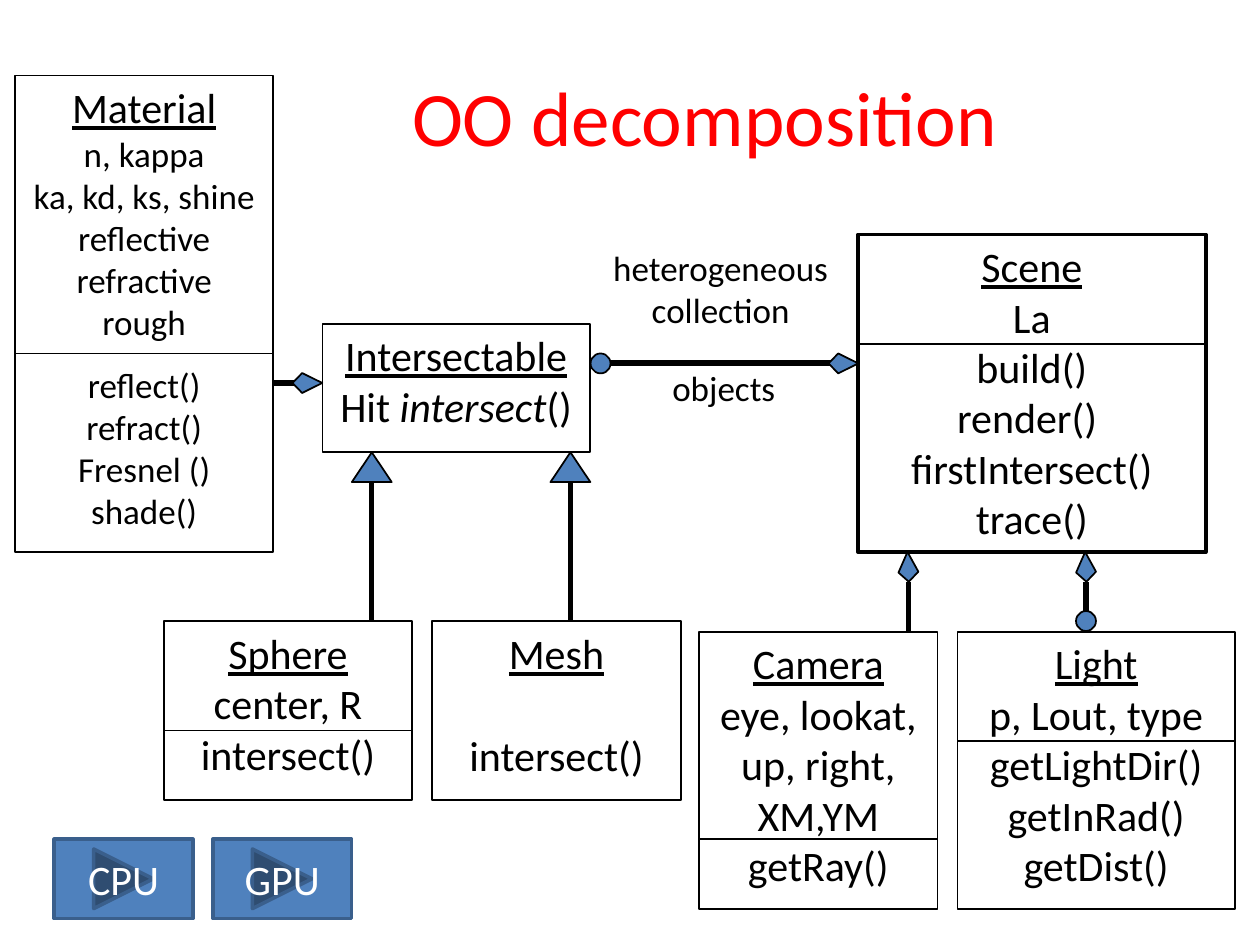
from dataclasses import dataclass
from lxml import etree
from pptx import Presentation
from pptx import util as u
from pptx.dml.color import RGBColor
from pptx.enum import shapes, text
from pptx.oxml.ns import qn

Pt = u.Pt
Kind = shapes.MSO_SHAPE


@dataclass(frozen=True)
class Theme:
    font: str = "Calibri"
    ink: str = "000000"
    red: str = "FF0000"
    blue: str = "4F81BD"
    edge: str = "3A5F8C"
    white: str = "FFFFFF"
    head: int = 44
    body: int = 24
    small: int = 20


def write(frame, words, size, color, under=False, slant=False, gap=0, join=False):
    """Add a centred paragraph, or a run to the last one when join is set."""
    para = frame.paragraphs[-1]
    if para.runs and not join:
        para = frame.add_paragraph()
    if not join:
        para.alignment = text.PP_ALIGN.CENTER
        para.space_before = Pt(gap)
    run = para.add_run()
    run.text = words
    font = run.font
    font.name, font.size = Theme.font, Pt(size)
    font.color.rgb = RGBColor.from_string(color)
    font.underline, font.italic = under, slant


class Board:
    def __init__(self, slide, theme):
        self.slide, self.theme = slide, theme
        self.items = slide.shapes

    def paint(self, item, fill=None, edge=None, width=1):
        item.shadow.inherit = False
        if fill:
            item.fill.solid()
            item.fill.fore_color.rgb = RGBColor.from_string(fill)
        else:
            item.fill.background()
        item.line.color.rgb = RGBColor.from_string(edge or self.theme.ink)
        item.line.width = Pt(width)
        return item

    def label(self, words, x, y, w, h, size, color, wrap=False):
        frame = self.items.add_textbox(Pt(x), Pt(y), Pt(w), Pt(h)).text_frame
        frame.word_wrap = wrap
        frame.vertical_anchor = text.MSO_ANCHOR.MIDDLE if wrap else text.MSO_ANCHOR.TOP
        for row in words.split("\n"):
            write(frame, row, size, color)

    def rule(self, x1, y1, x2, y2, width=3):
        line = self.items.add_connector(
            shapes.MSO_CONNECTOR.STRAIGHT, Pt(x1), Pt(y1), Pt(x2), Pt(y2))
        line.line.color.rgb = RGBColor.from_string(self.theme.ink)
        line.line.width = Pt(width)
        etree.SubElement(line._element.spPr, qn("a:effectLst"))

    def box(self, name, rows, x, y, w, h, size=None, cut=None, width=1, gaps=None):
        """Class box: underlined name, member rows, divider at height cut."""
        t = self.theme
        item = self.items.add_shape(Kind.RECTANGLE, Pt(x), Pt(y), Pt(w), Pt(h))
        frame = self.paint(item, width=width).text_frame
        frame.word_wrap = True
        frame.vertical_anchor = text.MSO_ANCHOR.TOP
        write(frame, name, t.body, t.ink, under=True)
        for row in rows:
            write(frame, row, size or t.body, t.ink, gap=(gaps or {}).get(row, 0))
        if cut:
            self.rule(x, cut, x + w, cut, 0.75)
        return frame

    def form(self, points, turn=0):
        (x, y), *rest = [(Pt(a), Pt(b)) for a, b in points]
        pen = self.items.build_freeform(x, y)
        pen.add_line_segments(rest, close=True)
        item = self.paint(pen.convert_to_shape(), self.theme.blue)
        item.rotation = turn

    def kite(self, x, y, turn=0):
        mid = y + 5.7
        self.form([(x + 17, mid), (x + 5.5, y), (x, mid), (x + 5.5, y + 11.4)], turn)

    def roof(self, x, y):
        self.form([(x - 11.4, y + 17), (x, y), (x + 11.4, y + 17)])

    def dot(self, x, y):
        item = self.items.add_shape(Kind.OVAL, Pt(x), Pt(y), Pt(11.4), Pt(11.4))
        self.paint(item, self.theme.blue)

    def button(self, words, x, y, w, h):
        t = self.theme
        item = self.items.add_shape(
            Kind.ACTION_BUTTON_FORWARD_OR_NEXT, Pt(x), Pt(y), Pt(w), Pt(h))
        frame = self.paint(item, t.blue, t.edge, 2).text_frame
        frame.vertical_anchor = text.MSO_ANCHOR.MIDDLE
        write(frame, words, t.body, t.white)


def main():
    deck = Presentation()
    deck.slide_width, deck.slide_height = Pt(720), Pt(540)
    t = Theme()
    b = Board(deck.slides.add_slide(deck.slide_layouts[6]), t)

    # Title
    b.label("OO decomposition", 150.5, 21, 504.5, 90, t.head, t.red, wrap=True)

    # Classes
    b.box("Scene", ["La", "build()", "render() ", "firstIntersect()", "trace()"],
          490.3, 134, 198.7, 181.5, cut=196.5, width=2.25)
    hit = b.box("Intersectable", ["Hit"], 184.3, 185, 152.7, 73.5)
    write(hit, " intersect", t.body, t.ink, slant=True, join=True)
    write(hit, "()", t.body, t.ink, join=True)
    b.box("Camera", ["eye, lookat, up, right, XM,YM", "getRay()"],
          399.5, 361, 136.2, 158.4, cut=479.5)
    b.box("Light", ["p, Lout, type", "getLightDir()", "getInRad()", "getDist()"],
          547.2, 361, 158.4, 158.4, cut=423.4)
    b.box("Sphere", ["center, R", "intersect()"], 93.6, 355, 142, 102.2, cut=417.5)
    b.box("Mesh", ["intersect()"], 247, 355, 142, 102.2, gaps={"intersect()": 29.3})
    b.box("Material",
          ["n, kappa", "ka, kd, ks, shine", "reflective", "refractive", "rough",
           "reflect()", "refract()", "Fresnel ()", "shade()"],
          8.6, 43.2, 147.6, 272.2, size=t.small, cut=202.2, gaps={"reflect()": 12.2})

    # Inheritance
    for x in (212.5, 326):
        b.rule(x, 355, x, 275.8)
        b.roof(x, 258.5)

    # Composition
    b.rule(348.5, 207.5, 479, 207.5)
    b.kite(473.5, 202)
    b.dot(337.5, 202)
    b.rule(173, 218.9, 156.2, 218.9)
    b.kite(167.2, 213.2)
    b.rule(519, 361, 519, 332.6)
    b.kite(510.5, 318.2, 267.5)
    b.rule(620.6, 355, 620.6, 332.6)
    b.kite(612, 318.2, 267.5)
    b.dot(614.9, 349.2)

    # Role names
    b.label("heterogeneous\ncollection", 342.7, 137.5, 138.2, 55.5, t.small, t.ink)
    b.label("objects", 376.5, 206, 74.2, 31.5, t.small, t.ink)

    # Buttons
    for i, name in enumerate(("CPU", "GPU")):
        b.button(name, 31 + 90.7 * i, 479.5, 79.2, 45.4)

    deck.save("out.pptx")


if __name__ == "__main__":
    main()
